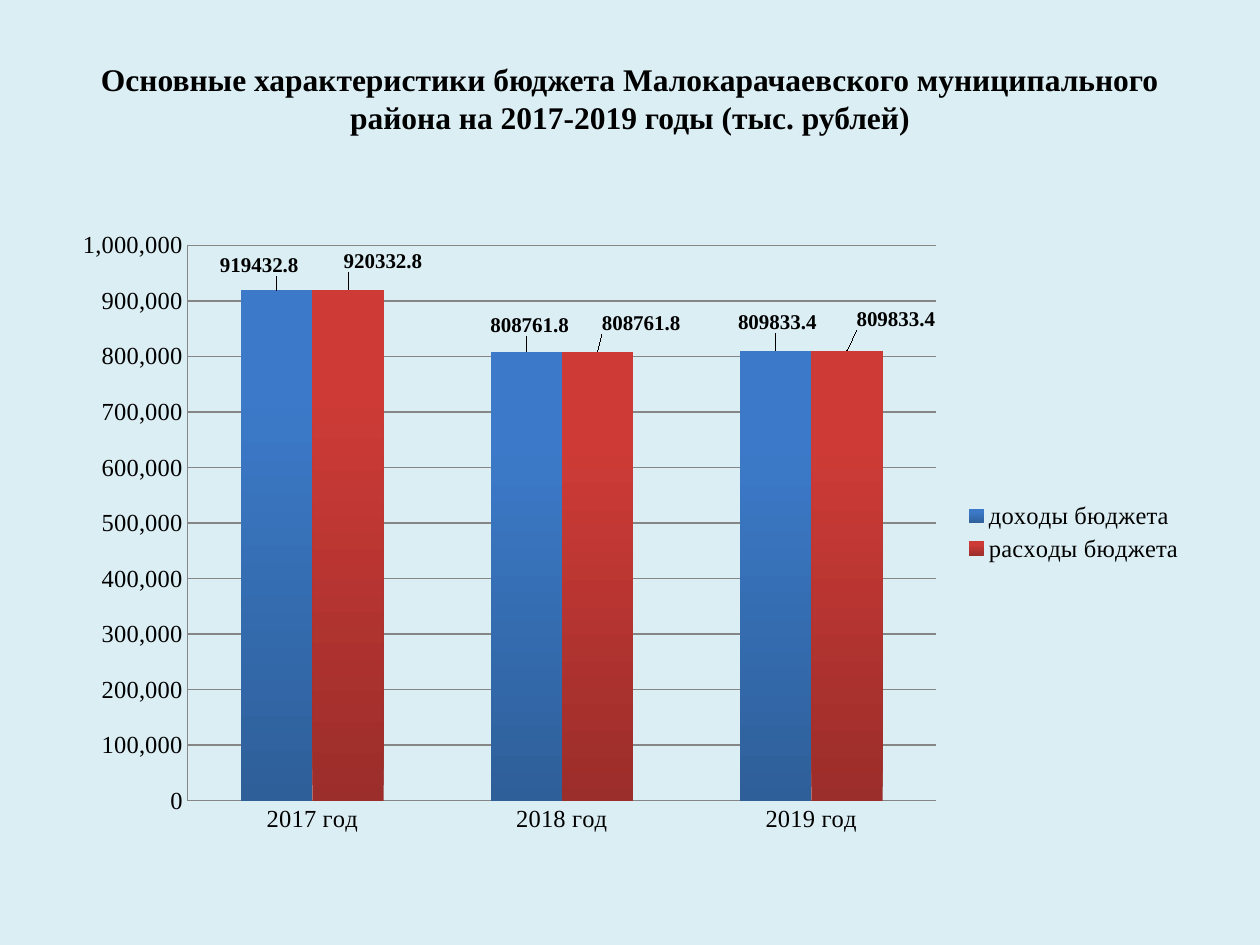
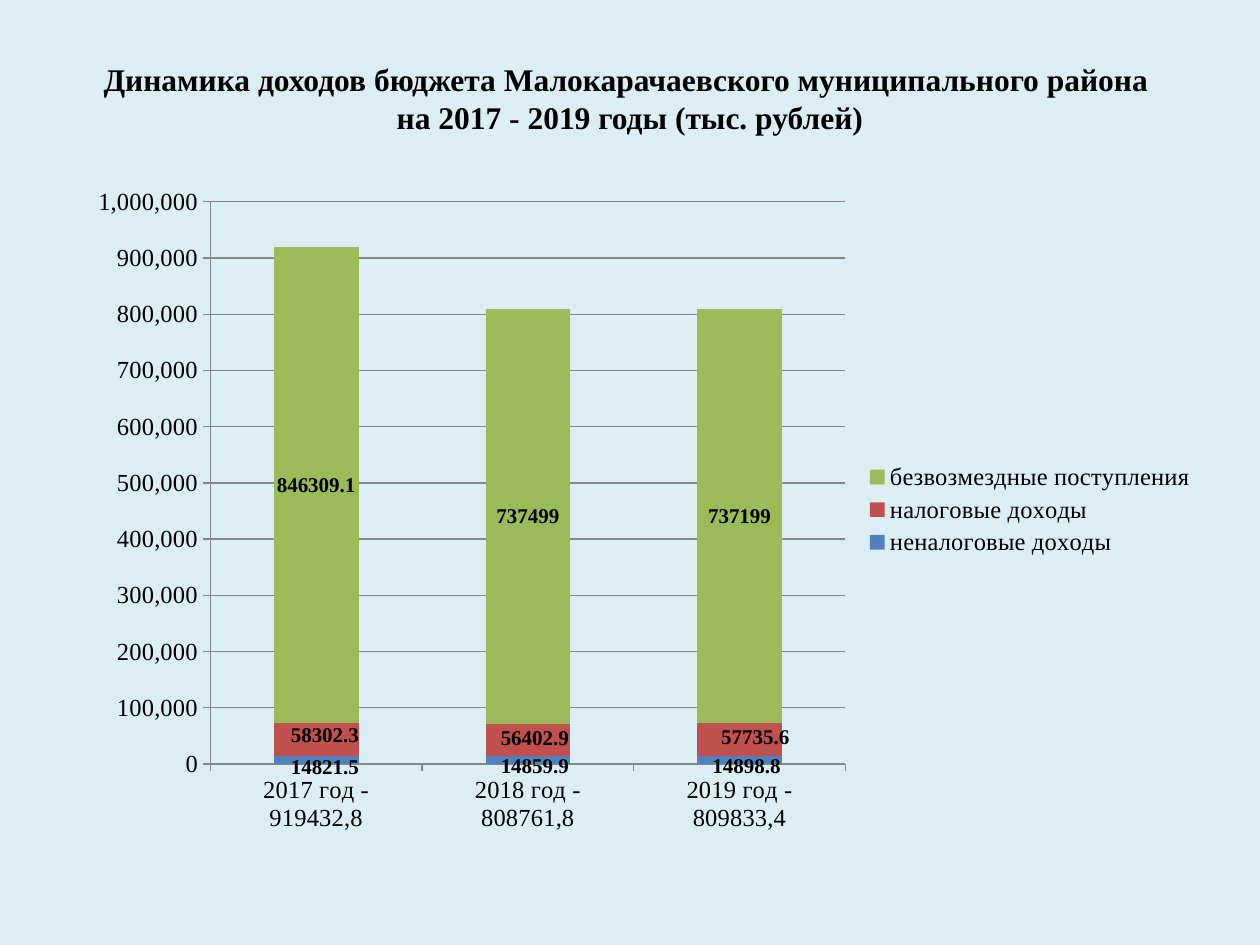
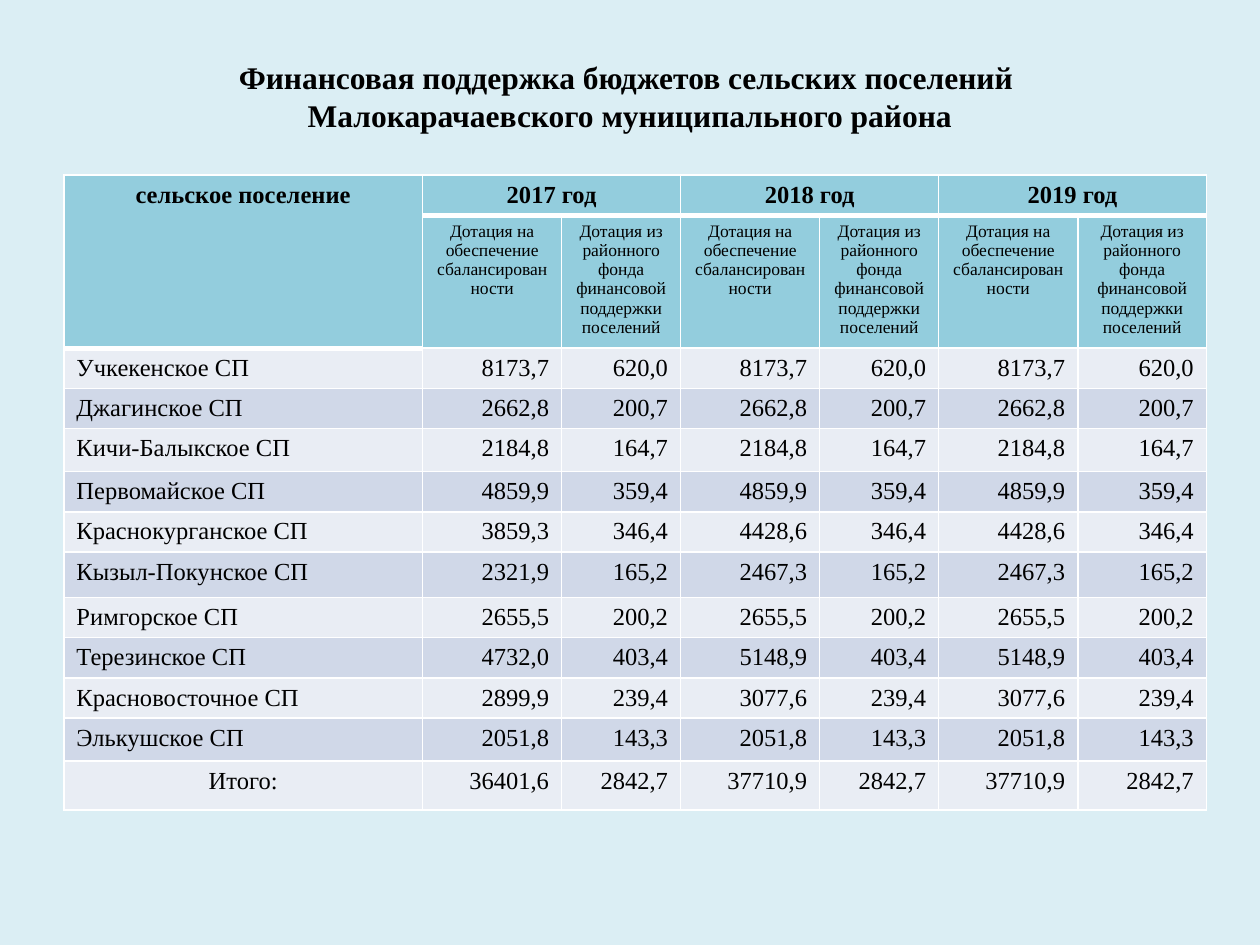
from lxml import etree
from pptx import Presentation
from pptx.chart.data import CategoryChartData
from pptx.dml.color import RGBColor
from pptx.enum.chart import (XL_CHART_TYPE, XL_LABEL_POSITION,
                             XL_LEGEND_POSITION, XL_TICK_MARK)
from pptx.enum.text import MSO_ANCHOR, MSO_AUTO_SIZE, PP_ALIGN
from pptx.oxml import parse_xml
from pptx.oxml.ns import nsdecls, qn
from pptx.util import Pt

CLUSTERED, STACKED = XL_CHART_TYPE.COLUMN_CLUSTERED, XL_CHART_TYPE.COLUMN_STACKED
OUTSIDE, CENTERED = XL_LABEL_POSITION.OUTSIDE_END, XL_LABEL_POSITION.CENTER
TICK_NONE, TICK_OUT = XL_TICK_MARK.NONE, XL_TICK_MARK.OUTSIDE
LEFT, CENTER, RIGHT = PP_ALIGN.LEFT, PP_ALIGN.CENTER, PP_ALIGN.RIGHT

# Shared look
FONT = "Times New Roman"
BACKGROUND, BLACK, WHITE, GRID = "DBEEF4", "000000", "FFFFFF", "868686"
HEADER_FILL, ROW_FILLS = "93CDDD", ("E9EDF4", "D0D8E8")
BLUE, RED, GREEN = "4F81BD", "C0504D", "9BBB59"
BLUE_GRADIENT, RED_GRADIENT = ("2E5F99", "3C7AC9"), ("9B2D2A", "CE3B37")

# Series: name, values, fill, label shifts in points
BUDGET_SERIES = [
    ("доходы бюджета", (919432.8, 808761.8, 809833.4), BLUE_GRADIENT,
     [(-10, -5), (2, -6), (1, -7)]),
    ("расходы бюджета", (920332.8, 808761.8, 809833.4), RED_GRADIENT,
     [(20, -7), (25, -7), (28, -9)]),
]
INCOME_SERIES = [
    ("неналоговые доходы", (14821.5, 14859.9, 14898.8), BLUE,
     [(5, 4), (4, 4), (4, 4)]),
    ("налоговые доходы", (58302.3, 56402.9, 57735.6), RED,
     [(5, -2), (4, -1), (9, -1)]),
    ("безвозмездные поступления", (846309.1, 737499, 737199), GREEN, []),
]

# Settlement, balance grant 2017, balance grant 2018 and 2019, yearly fund grant
YEARS = ("2017 год", "2018 год", "2019 год")
GRANTS = ("Дотация на обеспечение сбалансированности",
          "Дотация из районного фонда финансовой поддержки поселений")
SUPPORT = [
    ("Учкекенское СП", "8173,7", "8173,7", "620,0"),
    ("Джагинское СП", "2662,8", "2662,8", "200,7"),
    ("Кичи-Балыкское СП", "2184,8", "2184,8", "164,7"),
    ("Первомайское СП", "4859,9", "4859,9", "359,4"),
    ("Краснокурганское СП", "3859,3", "4428,6", "346,4"),
    ("Кызыл-Покунское СП", "2321,9", "2467,3", "165,2"),
    ("Римгорское СП", "2655,5", "2655,5", "200,2"),
    ("Терезинское СП", "4732,0", "5148,9", "403,4"),
    ("Красновосточное СП", "2899,9", "3077,6", "239,4"),
    ("Элькушское СП", "2051,8", "2051,8", "143,3"),
    ("Итого:", "36401,6", "37710,9", "2842,7"),
]
COL_WIDTHS = (205, 79.5, 68, 79.5, 68, 79.5, 73.5)
ROW_HEIGHTS = (23, 76, 23, 23, 24.5, 23, 23, 26, 23, 23, 23, 24.5, 28)


def rgb(value):
    return RGBColor.from_string(value)


def style_font(font, size, bold=False, name=FONT):
    font.size, font.bold, font.name = Pt(size), bold, name
    font.color.rgb = rgb(BLACK)


def write(tf, text, size=14, bold=False, align=LEFT):
    p = tf.paragraphs[0]
    p.alignment = align
    for i, line in enumerate(text.split("\n")):
        if i:
            p.add_line_break()
        r = p.add_run()
        r.text = line
        style_font(r.font, size, bold)


def add_titled_slide(prs, text, height=90, bottom=25):
    s = prs.slides.add_slide(prs.slide_layouts[5])
    title = s.shapes.title
    title.left, title.top, title.width, title.height = Pt(36), Pt(21.5), Pt(648), Pt(height)
    tf = title.text_frame
    tf.word_wrap, tf.auto_size = True, MSO_AUTO_SIZE.NONE
    tf.vertical_anchor, tf.margin_bottom = MSO_ANCHOR.MIDDLE, Pt(bottom)
    write(tf, text, size=18, bold=True, align=CENTER)
    return s


# Charts
def manual_layout(x, y, w=None, h=None):
    layout = parse_xml(f"<c:layout {nsdecls('c')}><c:manualLayout/></c:layout>")
    values = [("x", x), ("y", y)]
    if w is not None:
        values = ([("layoutTarget", "inner"), ("xMode", "edge"), ("yMode", "edge")]
                  + values + [("w", w), ("h", h)])
    for tag, value in values:
        etree.SubElement(layout[0], qn(f"c:{tag}")).set("val", str(value))
    return layout


def fill_series(fill, color):
    if isinstance(color, str):
        fill.solid()
        fill.fore_color.rgb = rgb(color)
        return
    fill.gradient()
    fill.gradient_angle = 90
    for stop, value, position in zip(fill.gradient_stops, color, (0, 0.8)):
        stop.color.rgb, stop.position = rgb(value), position


def label_series(series, shifts, position, width, height):
    labels = series.data_labels
    labels.show_value, labels.position = True, position
    style_font(labels.font, 12, bold=True)
    for i, (dx, dy) in enumerate(shifts):
        label = series.points[i].data_label
        label.position = position
        style_font(label.font, 12, bold=True)
        element = series._element.xpath(f"c:dLbls/c:dLbl[c:idx/@val='{i}']")[0]
        element.insert(1, manual_layout(dx / width, dy / height))


def style_axis(axis, tick):
    axis.major_tick_mark, axis.minor_tick_mark = tick, TICK_NONE
    axis.format.line.color.rgb = rgb(GRID)
    style_font(axis.tick_labels.font, 14)


def add_column_chart(s, kind, box, plot_box, cats, rows, tick, position):
    data = CategoryChartData()
    data.categories = cats
    for name, values, _, _ in rows:
        data.add_series(name, values)
    chart = s.shapes.add_chart(kind, *map(Pt, box), data).chart
    chart.has_title = False
    style_font(chart.font, 18, name="Calibri")
    chart.has_legend = True
    chart.legend.position = XL_LEGEND_POSITION.RIGHT
    chart.legend.include_in_layout = False
    style_font(chart.legend.font, 14)

    axis = chart.value_axis
    axis.minimum_scale, axis.maximum_scale, axis.major_unit = 0, 1000000, 100000
    axis.has_major_gridlines = True
    axis.major_gridlines.format.line.color.rgb = rgb(GRID)
    axis.tick_labels.number_format = "#,##0"
    axis.tick_labels.number_format_is_linked = False
    for each in (chart.category_axis, axis):
        style_axis(each, tick)

    plot = chart.plots[0]
    plot.vary_by_categories, plot.gap_width = False, 150
    plot.overlap = 100 if kind == STACKED else 0
    for series, (_, _, color, shifts) in zip(plot.series, rows):
        fill_series(series.format.fill, color)
        label_series(series, shifts, position, *box[2:])

    area = chart._chartSpace.xpath("c:chart/c:plotArea")[0]
    for old in area.findall(qn("c:layout")):
        area.remove(old)
    area.insert(0, manual_layout(*plot_box))


# Table
def set_borders(cell, top=1, bottom=1):
    pr = cell._tc.get_or_add_tcPr()
    for i, (side, width) in enumerate(zip("LRTB", (1, 1, top, bottom))):
        pr.insert(i, parse_xml(
            f'<a:ln{side} {nsdecls("a")} w="{Pt(width)}"><a:solidFill>'
            f'<a:srgbClr val="{WHITE}"/></a:solidFill></a:ln{side}>'))


def add_support_table(s):
    shape = s.shapes.add_table(len(ROW_HEIGHTS), len(COL_WIDTHS), Pt(36.5), Pt(100),
                               Pt(sum(COL_WIDTHS)), Pt(sum(ROW_HEIGHTS)))
    table = shape.table
    table.first_row = table.horz_banding = False
    for col, width in zip(table.columns, COL_WIDTHS):
        col.width = Pt(width)
    for row, height in zip(table.rows, ROW_HEIGHTS):
        row.height = Pt(height)

    # Fills and borders, heavier under the header cells
    for r in range(len(ROW_HEIGHTS)):
        for c in range(len(COL_WIDTHS)):
            cell = table.cell(r, c)
            cell.fill.solid()
            cell.fill.fore_color.rgb = rgb(HEADER_FILL if r < 2 else ROW_FILLS[r % 2])
            under_header = r == (2 if c == 0 else 1)
            set_borders(cell, top=3 if under_header else 1,
                        bottom=3 if r == 0 or (r, c) == (1, 0) else 1)

    # Header
    table.cell(0, 0).merge(table.cell(1, 0))
    write(table.cell(0, 0).text_frame, "сельское поселение", bold=True, align=CENTER)
    for i, year in enumerate(YEARS):
        c = 1 + 2 * i
        table.cell(0, c).merge(table.cell(0, c + 1))
        write(table.cell(0, c).text_frame, year, bold=True, align=CENTER)
        for j, grant in enumerate(GRANTS):
            write(table.cell(1, c + j).text_frame, grant, size=10, align=CENTER)

    # Settlements and total
    for r, (name, first, later, fund) in enumerate(SUPPORT, start=2):
        is_total = r == len(ROW_HEIGHTS) - 1
        write(table.cell(r, 0).text_frame, name, align=CENTER if is_total else LEFT)
        for c, value in enumerate((first, fund, later, fund, later, fund), start=1):
            write(table.cell(r, c).text_frame, value, align=RIGHT)


def main():
    prs = Presentation()
    prs.slide_width, prs.slide_height = Pt(720), Pt(540)
    fill = prs.slide_master.background.fill
    fill.solid()
    fill.fore_color.rgb = rgb(BACKGROUND)

    # Slide 1: income and spending
    s = add_titled_slide(prs, "Основные характеристики бюджета Малокарачаевского "
                              "муниципального района на 2017-2019 годы (тыс. рублей)")
    add_column_chart(s, CLUSTERED, (36, 126, 648, 356.5), (0.11, 0.04, 0.66, 0.89),
                     YEARS, BUDGET_SERIES, TICK_NONE, OUTSIDE)

    # Slide 2: income by source
    s = add_titled_slide(prs, "Динамика доходов бюджета Малокарачаевского муниципального "
                              "района \nна 2017 - 2019 годы (тыс. рублей)")
    totals = ("919432,8", "808761,8", "809833,4")
    cats = [f"{year} - {total}" for year, total in zip(YEARS, totals)]
    add_column_chart(s, STACKED, (42.5, 100, 648, 382.5), (0.12, 0.04, 0.56, 0.84),
                     cats, INCOME_SERIES, TICK_OUT, CENTERED)

    # Slide 3: support of settlements
    s = add_titled_slide(prs, "Финансовая поддержка бюджетов сельских поселений \n"
                              "Малокарачаевского муниципального района",
                         height=67, bottom=3.6)
    add_support_table(s)

    prs.save("out.pptx")


if __name__ == "__main__":
    main()
